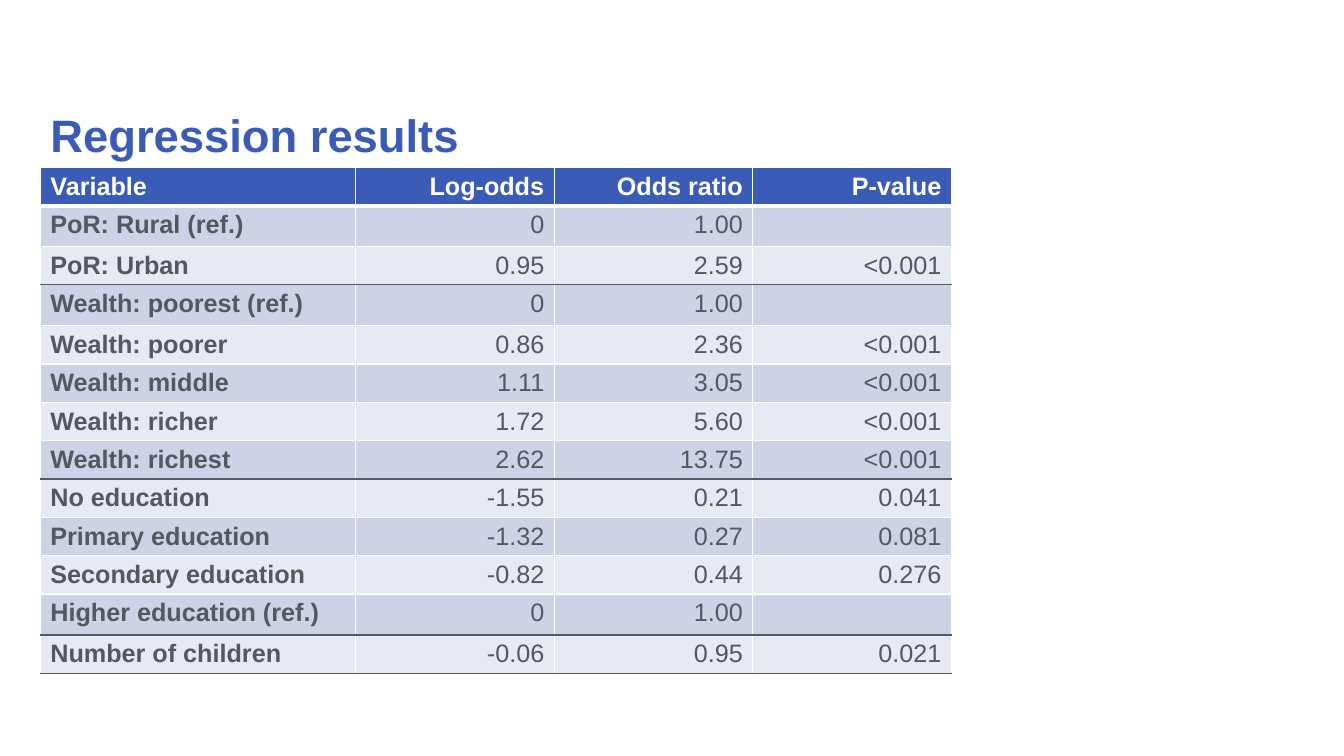
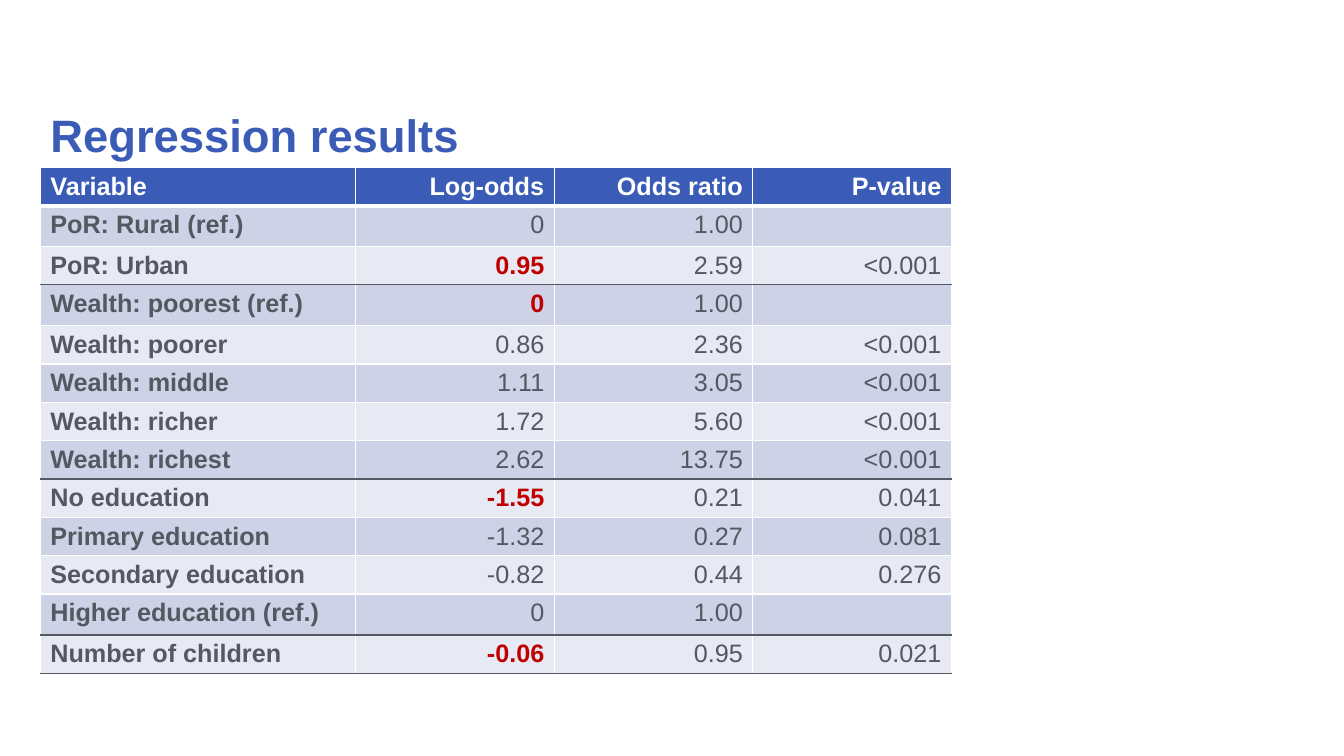
"""Build two regression result slides, the second with coefficients marked."""
import pptx
import pptx.dml.color
import pptx.enum.text
import pptx.oxml
import pptx.oxml.ns
import pptx.util

Pt = pptx.util.Pt
FONT = "Arial"
BLUE, GREY, RED, WHITE = "3A5CB7", "545860", "C00000", "FFFFFF"
BANDS = ("E8EAF3", "CED2E6")
TITLE_BOX = (28.8, 76.32, 902.88, 44.64)
TABLE_BOX = (28.8, 119.52, 650.88, 355.68)
FIRST_COL = 225.36
GROUP_ENDS = (2, 7, 11, 12)
ROWS = [
    ("Variable", "Log-odds", "Odds ratio", "P-value"),
    ("PoR: Rural (ref.)", "0", "1.00", ""),
    ("PoR: Urban", "0.95", "2.59", "<0.001"),
    ("Wealth: poorest (ref.)", "0", "1.00", ""),
    ("Wealth: poorer", "0.86", "2.36", "<0.001"),
    ("Wealth: middle", "1.11", "3.05", "<0.001"),
    ("Wealth: richer", "1.72", "5.60", "<0.001"),
    ("Wealth: richest", "2.62", "13.75", "<0.001"),
    ("No education", "-1.55", "0.21", "0.041"),
    ("Primary education", "-1.32", "0.27", "0.081"),
    ("Secondary education", "-0.82", "0.44", "0.276"),
    ("Higher education (ref.)", "0", "1.00", ""),
    ("Number of children", "-0.06", "0.95", "0.021"),
]
MARKED = {(2, 1), (3, 1), (8, 1), (12, 1)}


def rgb(color):
    """Turn a hex string into a colour."""
    return pptx.dml.color.RGBColor.from_string(color)


def style(p, size, color, bold, align):
    """Set the alignment of a paragraph and the font of its runs."""
    p.alignment = getattr(pptx.enum.text.PP_ALIGN, align)
    for r in p.runs:
        r.font.name, r.font.size, r.font.bold = FONT, Pt(size), bold
        r.font.color.rgb = rgb(color)


def add_title(s, text, box):
    """Place the slide title in the given box."""
    sp = s.shapes.title
    sp.left, sp.top, sp.width, sp.height = map(Pt, box)
    tf = sp.text_frame
    tf.text = text
    tf.vertical_anchor = pptx.enum.text.MSO_ANCHOR.MIDDLE
    tf.paragraphs[0].line_spacing = 0.9
    style(tf.paragraphs[0], 32.4, BLUE, True, "LEFT")


def set_border(cell, side, color, width):
    """Draw one border of a table cell."""
    ns = pptx.oxml.ns.nsdecls("a")
    cell._tc.get_or_add_tcPr().append(pptx.oxml.parse_xml(
        f'<a:ln{side} {ns} w="{Pt(width)}"><a:solidFill>'
        f'<a:srgbClr val="{color}"/></a:solidFill></a:ln{side}>'))


def format_cell(cell, row, col, marked):
    """Give a cell its borders, fill and font by its place in the table."""
    header = row == 0
    top = GREY if row - 1 in GROUP_ENDS else WHITE
    bottom = GREY if row in GROUP_ENDS else WHITE
    set_border(cell, "L", WHITE, 1)
    set_border(cell, "R", WHITE, 1)
    set_border(cell, "T", top, 3 if row == 1 else 1)
    set_border(cell, "B", bottom, 3 if header else 1)
    cell.fill.solid()
    cell.fill.fore_color.rgb = rgb(BLUE if header else BANDS[row % 2])
    color = WHITE if header else RED if marked else GREY
    style(cell.text_frame.paragraphs[0], 18, color,
          header or col == 0 or marked, "RIGHT" if col else "LEFT")


def add_results(s, rows, box, marked):
    """Place the results table in the given box."""
    n_cols = len(rows[0])
    table = s.shapes.add_table(len(rows), n_cols, *map(Pt, box)).table
    table.horz_banding = False
    for col in range(n_cols):
        rest = (box[2] - FIRST_COL) / (n_cols - 1)
        table.columns[col].width = Pt(rest if col else FIRST_COL)
    for row, values in enumerate(rows):
        table.rows[row].height = Pt(box[3] / len(rows))
        for col, value in enumerate(values):
            cell = table.cell(row, col)
            cell.text_frame.text = value
            format_cell(cell, row, col, (row, col) in marked)


def add_slide(prs, marked):
    """Add a results slide with the given cells marked."""
    s = prs.slides.add_slide(prs.slide_layouts.get_by_name("Title Only"))
    add_title(s, "Regression results", TITLE_BOX)
    add_results(s, ROWS, TABLE_BOX, marked)


def main():
    """Build and save the presentation."""
    prs = pptx.Presentation()
    prs.slide_width, prs.slide_height = Pt(960), Pt(540)
    for marked in (set(), MARKED):
        add_slide(prs, marked)
    prs.save("out.pptx")


if __name__ == "__main__":
    main()
